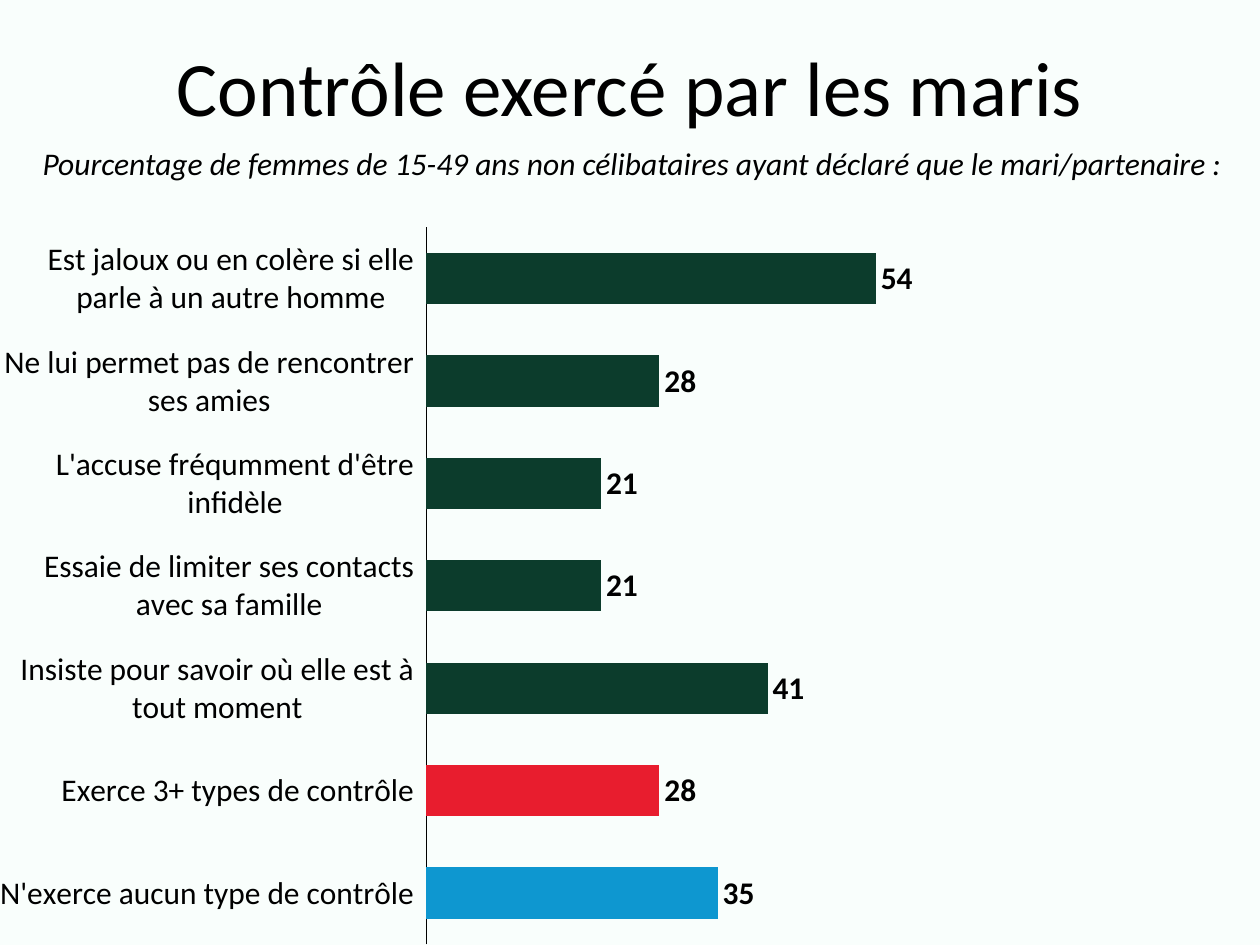
from lxml.etree import SubElement
from pptx import Presentation
from pptx.chart.data import CategoryChartData
from pptx.dml.color import RGBColor
from pptx.enum.chart import XL_CHART_TYPE as ChartType
from pptx.enum.chart import XL_LABEL_POSITION as LabelPosition
from pptx.enum.chart import XL_TICK_LABEL_POSITION as TickLabels
from pptx.enum.chart import XL_TICK_MARK as TickMark
from pptx.enum.text import MSO_ANCHOR as Anchor
from pptx.enum.text import PP_ALIGN as Align
from pptx.oxml.ns import qn
from pptx.util import Cm, Pt

BLACK = RGBColor(0x00, 0x00, 0x00)
PALE_MINT = RGBColor(0xF9, 0xFE, 0xFC)
DARK_GREEN = RGBColor(0x0C, 0x3C, 0x2C)
RED = RGBColor(0xE8, 0x1D, 0x2E)
BLUE = RGBColor(0x0E, 0x97, 0xD0)

FONT = "Calibri"
SLIDE_WIDTH, SLIDE_HEIGHT = Cm(25.4), Cm(19.05)
CHART_TOP = Cm(4.57)

# Bars from bottom to top: label, percentage, colour
BARS = [
    ("N'exerce aucun type de contrôle", 35, BLUE),
    ("Exerce 3+ types de contrôle", 28, RED),
    ("Insiste pour savoir où elle est à tout moment", 41, DARK_GREEN),
    ("Essaie de limiter ses contacts avec sa famille", 21, DARK_GREEN),
    ("L'accuse fréqumment d'être infidèle", 21, DARK_GREEN),
    ("Ne lui permet pas de rencontrer ses amies", 28, DARK_GREEN),
    ("Est jaloux ou en colère si elle parle à un autre homme", 54, DARK_GREEN),
]
PLOT_LAYOUT = {
    "layoutTarget": "inner", "xMode": "edge", "yMode": "edge",
    "x": 0.336, "y": 0, "w": 0.663, "h": 1,
}


def set_values(target, values):
    for name, value in values.items():
        setattr(target, name, value)


def format_font(font, size, **values):
    set_values(font, {"name": FONT, "size": Pt(size), **values})
    font.color.rgb = BLACK


def write_line(box, text, size, **values):
    box.text_frame.word_wrap = True
    para = box.text_frame.paragraphs[0]
    para.alignment = Align.CENTER
    span = para.add_run()
    span.text = text
    format_font(span.font, size, **values)
    return para


def add_title(page, text):
    title = page.shapes.title
    set_values(title, {"left": 0, "top": 0, "width": SLIDE_WIDTH, "height": Cm(3.68)})
    title.text_frame.vertical_anchor = Anchor.MIDDLE
    write_line(title, text, 44).line_spacing = 0.9


def add_subtitle(page, text):
    box = page.shapes.add_textbox(Cm(0.05), Cm(2.77), SLIDE_WIDTH, Cm(1.02))
    write_line(box, text, 18, italic=True)


def place_plot(chart):
    plot_area = chart.element.find(".//" + qn("c:plotArea"))
    for old_layout in plot_area.findall(qn("c:layout")):
        plot_area.remove(old_layout)
    layout = SubElement(plot_area, qn("c:layout"))
    plot_area.insert(0, layout)
    manual = SubElement(layout, qn("c:manualLayout"))
    for name, value in PLOT_LAYOUT.items():
        SubElement(manual, qn("c:" + name)).set("val", str(value))


def format_axes(chart):
    category_axis, value_axis = chart.category_axis, chart.value_axis
    set_values(category_axis, {
        "major_tick_mark": TickMark.NONE, "minor_tick_mark": TickMark.NONE,
        "tick_label_position": TickLabels.LOW, "has_major_gridlines": False,
    })
    format_font(category_axis.tick_labels.font, 18)
    category_axis.format.line.color.rgb = BLACK
    category_axis.format.line.width = Pt(0.75)
    set_values(value_axis, {
        "minimum_scale": 0, "maximum_scale": 100,
        "has_major_gridlines": False, "visible": False,
    })


def add_bar_chart(page):
    data = CategoryChartData()
    data.categories = [label for label, _, _ in BARS]
    data.add_series("Series 1", [value for _, value, _ in BARS])
    chart = page.shapes.add_chart(
        ChartType.BAR_CLUSTERED, 0, CHART_TOP,
        SLIDE_WIDTH, SLIDE_HEIGHT - CHART_TOP, data).chart
    set_values(chart, {"has_legend": False, "has_title": False})
    format_font(chart.font, 10)
    format_axes(chart)

    # Bars and their values
    plot = chart.plots[0]
    set_values(plot, {"gap_width": 100, "vary_by_categories": False})
    series = plot.series[0]
    series.format.fill.solid()
    series.format.fill.fore_color.rgb = DARK_GREEN
    for index, (_, _, color) in enumerate(BARS):
        if color != DARK_GREEN:
            fill = series.points[index].format.fill
            fill.solid()
            fill.fore_color.rgb = color
    labels = series.data_labels
    set_values(labels, {"show_value": True, "position": LabelPosition.OUTSIDE_END})
    format_font(labels.font, 18, bold=True)
    place_plot(chart)


def main():
    deck = Presentation()
    set_values(deck, {"slide_width": SLIDE_WIDTH, "slide_height": SLIDE_HEIGHT})
    page = deck.slides.add_slide(deck.slide_layouts[5])
    page.background.fill.solid()
    page.background.fill.fore_color.rgb = PALE_MINT

    add_title(page, "Contrôle exercé par les maris")
    add_bar_chart(page)
    add_subtitle(page, "Pourcentage de femmes de 15-49 ans non célibataires "
                       "ayant déclaré que le mari/partenaire :")
    deck.save("out.pptx")


if __name__ == "__main__":
    main()
